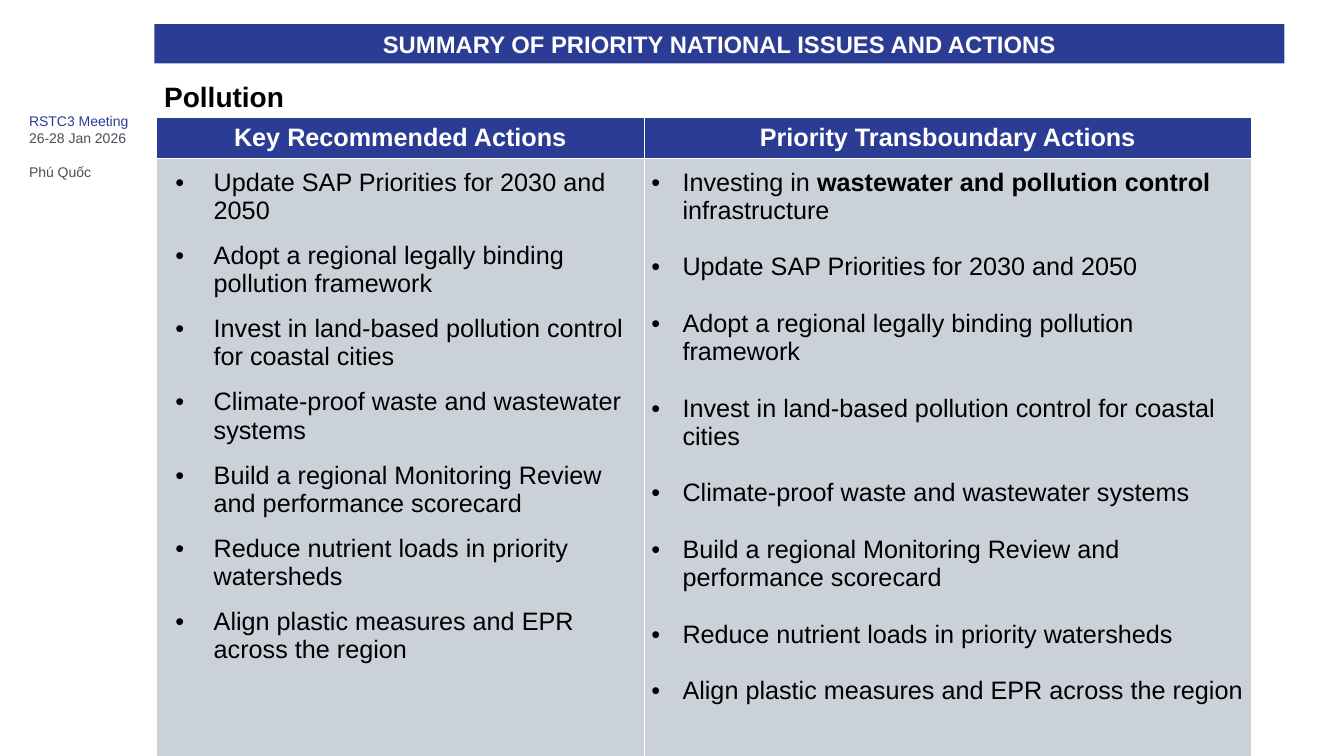
from pptx import Presentation
from pptx.dml.color import RGBColor
from pptx.enum.shapes import MSO_SHAPE
from pptx.enum.text import MSO_ANCHOR, PP_ALIGN
from pptx.oxml import parse_xml
from pptx.oxml.ns import nsdecls
from pptx.util import Inches, Pt

NAVY = RGBColor(0x2B, 0x3C, 0x94)
SLATE = RGBColor(0x49, 0x50, 0x57)
PALE = RGBColor(0xCA, 0xD1, 0xD8)
WHITE = RGBColor(0xFF, 0xFF, 0xFF)
BLACK = RGBColor(0, 0, 0)

SHARED_ACTIONS = [
    "Update SAP Priorities for 2030 and 2050",
    "Adopt a regional legally binding pollution framework",
    "Invest in land-based pollution control for coastal cities",
    "Climate-proof waste and wastewater systems",
    "Build a regional Monitoring Review and performance scorecard",
    "Reduce nutrient loads in priority watersheds",
    "Align plastic measures and EPR across the region",
]
INVESTMENT = ["Investing in ", "wastewater and pollution control ", "infrastructure"]


def style(font, size, color, bold=False):
    font.name = "Arial"
    font.size = Pt(size)
    font.color.rgb = color
    font.bold = bold


def add_label(slide, box, lines, size, colors, bold=False):
    label = slide.shapes.add_textbox(*map(Inches, box))
    frame = label.text_frame
    frame.word_wrap = True
    frame.text = "\n".join(lines)
    for paragraph, color in zip(frame.paragraphs, colors):
        style(paragraph.runs[0].font, size, color, bold)
    return frame


def add_banner(slide, box, title):
    banner = slide.shapes.add_shape(MSO_SHAPE.RECTANGLE, *map(Inches, box))
    banner.shadow.inherit = False
    banner.fill.solid()
    banner.fill.fore_color.rgb = NAVY
    banner.line.fill.background()
    banner.text_frame.text = title
    heading = banner.text_frame.paragraphs[0]
    heading.alignment = PP_ALIGN.CENTER
    style(heading.runs[0].font, 17, WHITE, True)


def paint_cell(cell, color):
    properties = cell._tc.get_or_add_tcPr()
    for side in ("lnL", "lnR", "lnT", "lnB"):
        properties.append(parse_xml(
            f'<a:{side} {nsdecls("a")} w="9525"><a:solidFill>'
            f'<a:srgbClr val="{WHITE}"/></a:solidFill></a:{side}>'))
    cell.fill.solid()
    cell.fill.fore_color.rgb = color


def fill_header(cell, title):
    paint_cell(cell, NAVY)
    cell.vertical_anchor = MSO_ANCHOR.MIDDLE
    cell.text = title
    heading = cell.text_frame.paragraphs[0]
    heading.alignment = PP_ALIGN.CENTER
    style(heading.runs[0].font, 18, WHITE, True)


def add_bullet(paragraph, margin, hanging):
    properties = paragraph._p.get_or_add_pPr()
    properties.set("marL", str(Inches(margin)))
    properties.set("indent", str(-Inches(hanging)))
    for element in (f'<a:buClr {nsdecls("a")}><a:srgbClr val="{BLACK}"/></a:buClr>',
                    f'<a:buFont {nsdecls("a")} typeface="Arial"/>',
                    f'<a:buChar {nsdecls("a")} char="•"/>'):
        properties.append(parse_xml(element))


def fill_actions(cell, actions, margin, hanging, gap):
    paint_cell(cell, PALE)
    cell.margin_left = cell.margin_right = Inches(0.07)
    cell.margin_top = cell.margin_bottom = Inches(0.1)
    frame = cell.text_frame
    frame.text = "\n".join(actions)
    for index, paragraph in enumerate(frame.paragraphs):
        add_bullet(paragraph, margin, hanging)
        if index:
            paragraph.space_before = Pt(gap)
        for run in paragraph.runs:
            style(run.font, 18, BLACK)


def emphasise_investment(paragraph):
    paragraph.runs[0].text = INVESTMENT[0]
    for position, words in enumerate(INVESTMENT[1:]):
        run = paragraph.add_run()
        run.text = words
        style(run.font, 18, BLACK, position == 0)


def add_actions_table(slide):
    widths, heights = (4.84, 6.02), (0.39, 5.94)
    table = slide.shapes.add_table(
        2, 2, Inches(1.55), Inches(1.17),
        Inches(sum(widths)), Inches(sum(heights))).table
    for column, width in zip(table.columns, widths):
        column.width = Inches(width)
    for row, height in zip(table.rows, heights):
        row.height = Inches(height)
    fill_header(table.cell(0, 0), "Key Recommended Actions")
    fill_header(table.cell(0, 1), "Priority Transboundary Actions")
    fill_actions(table.cell(1, 0), SHARED_ACTIONS, 0.5, 0.38, 12)
    transboundary = table.cell(1, 1)
    fill_actions(transboundary, ["".join(INVESTMENT)] + SHARED_ACTIONS, 0.31, 0.31, 20.2)
    emphasise_investment(transboundary.text_frame.paragraphs[0])


def main():
    presentation = Presentation()
    presentation.slide_width = Inches(13.33)
    presentation.slide_height = Inches(7.5)
    slide = presentation.slides.add_slide(presentation.slide_layouts[6])
    meeting = add_label(slide, (0.19, 1.07, 1.34, 0.61),
                        ["RSTC3 Meeting", "26-28 Jan 2026", "Phú Quốc"],
                        10, (NAVY, SLATE, SLATE))
    meeting.paragraphs[2].space_before = Pt(12)
    add_actions_table(slide)
    add_banner(slide, (1.53, 0.24, 11.21, 0.39),
               "SUMMARY OF PRIORITY NATIONAL ISSUES AND ACTIONS")
    add_label(slide, (1.53, 0.74, 1.4, 0.44), ["Pollution"], 20, [BLACK], True)
    presentation.save("out.pptx")


if __name__ == "__main__":
    main()
